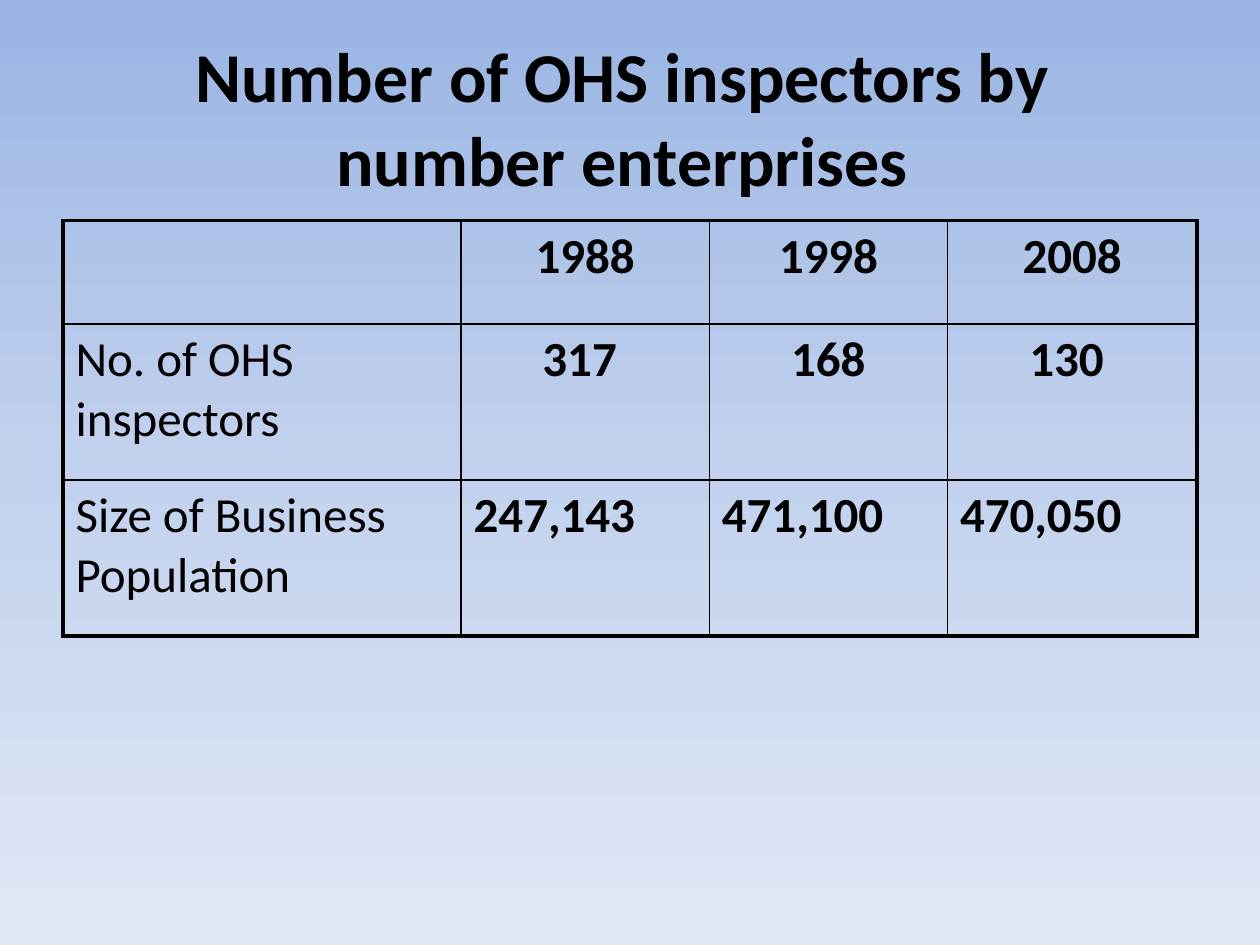
import copy
import pptx
import pptx.util
import pptx.dml.color
import pptx.enum.text
import pptx.oxml
import pptx.oxml.ns

COLORS = {"text": "000000", "border": "000000",
          "sky": "9AB5E4", "mid": "C2D1ED", "pale": "E1E8F5"}
FONT = "Calibri"
ALIGN = pptx.enum.text.PP_ALIGN
COL_WIDTHS = [3.16, 1.97, 1.89, 1.98]
ROW_HEIGHTS = [0.82, 1.24, 1.24]
ROWS = [
    ["", "1988", "1998", "2008"],
    ["No. of OHS inspectors", "317 ", "168", "130 "],
    ["Size of Business Population", "247,143", "471,100", "470,050"],
]
THIN, THICK = 1, 2.25


def format_font(font, size, bold):
    values = {"name": FONT, "size": pptx.util.Pt(size), "bold": bold}
    for name, value in values.items():
        setattr(font, name, value)
    font.color.rgb = pptx.dml.color.RGBColor.from_string(COLORS["text"])


def add_border(cell, side, width):
    """Draw one side (L, R, T or B) of a cell, width in points."""
    cell._tc.get_or_add_tcPr().append(pptx.oxml.parse_xml(
        f'<a:ln{side} {pptx.oxml.ns.nsdecls("a")} w="{pptx.util.Pt(width)}">'
        f'<a:solidFill><a:srgbClr val="{COLORS["border"]}"/></a:solidFill>'
        f'</a:ln{side}>'))


prs = pptx.Presentation()
prs.slide_width = pptx.util.Inches(10)
prs.slide_height = pptx.util.Inches(7.5)
W, H = prs.slide_width, prs.slide_height
s = prs.slides.add_slide(prs.slide_layouts[5])

# Background: three-stop vertical gradient
fill = s.background.fill
fill.gradient()
fill.gradient_angle = 270
first_stop = s.element.xpath(".//a:gs")[0]
first_stop.addnext(copy.deepcopy(first_stop))
for i, (stop, key) in enumerate(zip(fill.gradient_stops, ("sky", "mid", "pale"))):
    stop.position = i / 2
    stop.color.rgb = pptx.dml.color.RGBColor.from_string(COLORS[key])

# Title
title = s.shapes.title
box = {"left": W * 0.05, "top": H * 0.04, "width": W * 0.9, "height": H / 6}
for name, value in box.items():
    setattr(title, name, int(value))
tf = title.text_frame
tf.word_wrap = True
tf.vertical_anchor = pptx.enum.text.MSO_ANCHOR.MIDDLE
p = tf.paragraphs[0]
p.text = "Number of OHS inspectors by \vnumber enterprises "
p.alignment = ALIGN.CENTER
for r in p.runs:
    format_font(r.font, 40, True)

# Table
table = s.shapes.add_table(
    len(ROW_HEIGHTS), len(COL_WIDTHS), int(W * 0.05), pptx.util.Inches(1.75),
    int(W * 0.9), pptx.util.Inches(sum(ROW_HEIGHTS))).table
table.first_row = table.horz_banding = False
for column, width in zip(table.columns, COL_WIDTHS):
    column.width = pptx.util.Inches(width)
for row, height in zip(table.rows, ROW_HEIGHTS):
    row.height = pptx.util.Inches(height)

last_row, last_col = len(ROW_HEIGHTS) - 1, len(COL_WIDTHS) - 1
for i, texts in enumerate(ROWS):
    for j, text in enumerate(texts):
        cell = table.cell(i, j)
        outer = {"L": j == 0, "R": j == last_col, "T": i == 0, "B": i == last_row}
        for side, is_outer in outer.items():
            add_border(cell, side, THICK if is_outer else THIN)
        cell.fill.background()
        p = cell.text_frame.paragraphs[0]
        p.alignment = ALIGN.CENTER if j and i < last_row else ALIGN.LEFT
        p.space_before = pptx.util.Pt(5.6)
        if text:
            r = p.add_run()
            r.text = text
            format_font(r.font, 28, j > 0)

prs.save("out.pptx")
